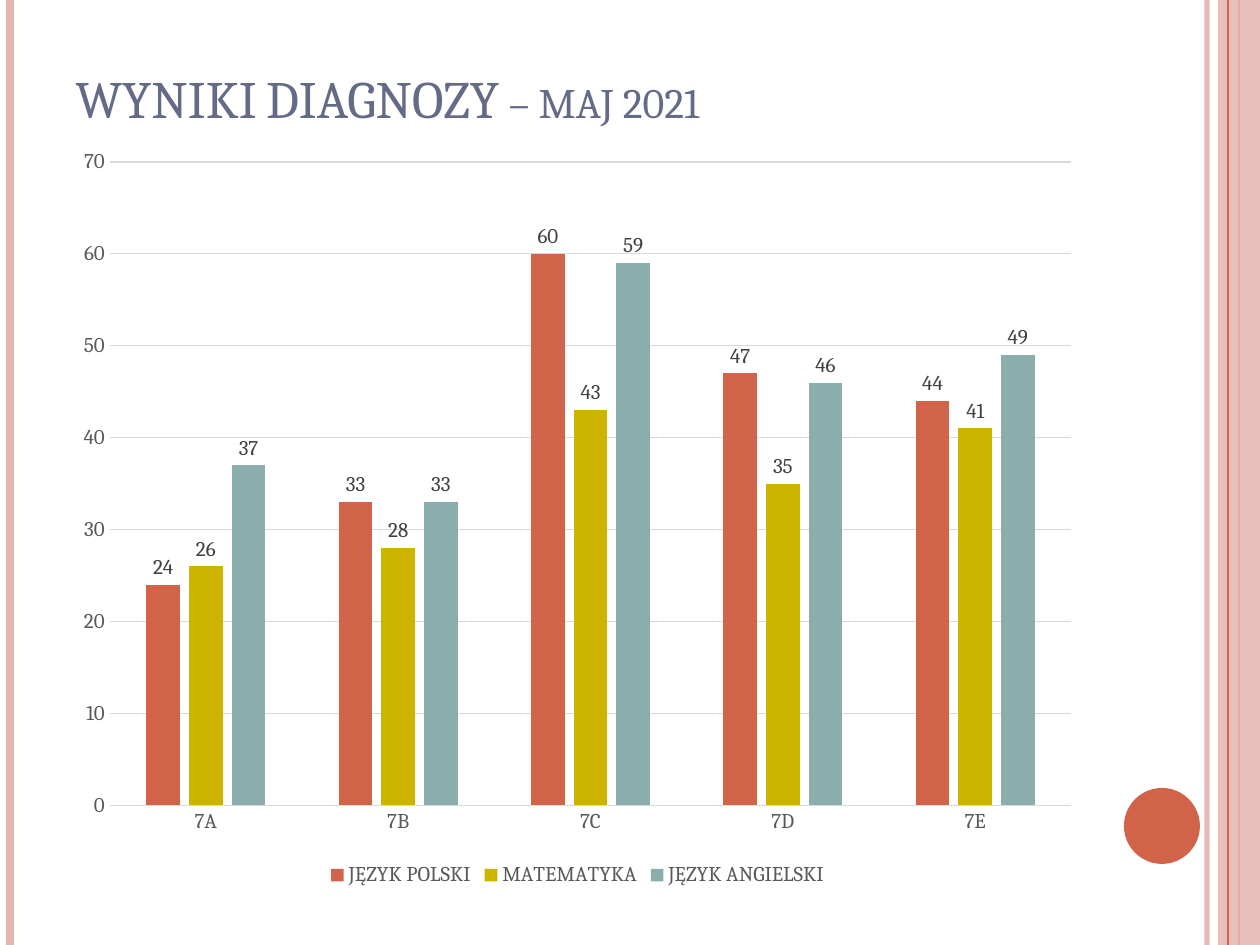
from lxml import etree
from pptx import Presentation
from pptx import util as u
from pptx.chart import data as chart_data
from pptx.dml.color import RGBColor
from pptx.enum import chart as ch, shapes, text
from pptx.oxml import ns

SCALE = 914400 / 126
WIDTH, HEIGHT = 1260, 945
FONT = "Cambria"

PINK = RGBColor(0xE5, 0xB7, 0xB1)
RED = RGBColor(0xD1, 0x63, 0x49)
OLIVE = RGBColor(0xCC, 0xB4, 0x00)
TEAL = RGBColor(0x8C, 0xAD, 0xAE)
SLATE = RGBColor(0x64, 0x6B, 0x86)
AXIS_GREY = RGBColor(0x59, 0x59, 0x59)
LABEL_GREY = RGBColor(0x40, 0x40, 0x40)
GRID_GREY = RGBColor(0xD9, 0xD9, 0xD9)

CLASSES = ["7A", "7B", "7C", "7D", "7E"]
RESULTS = [
    ("JĘZYK POLSKI", (24, 33, 60, 47, 44), RED),
    ("MATEMATYKA", (26, 28, 43, 35, 41), OLIVE),
    ("JĘZYK ANGIELSKI", (37, 33, 59, 46, 49), TEAL),
]


def px(length):
    return u.Emu(round(length * SCALE))


def box(*lengths):
    return [px(length) for length in lengths]


def set_font(font, size, color):
    font.name = FONT
    font.size = u.Pt(size)
    font.bold = False
    font.color.rgb = color


def set_opacity(part, percent):
    color = next(part._element.iter(ns.qn("a:srgbClr")))
    etree.SubElement(color, ns.qn("a:alpha"), val=str(percent * 1000))


def add_stripe(slide, x, color, width, opacity=100):
    stripe = slide.shapes.add_connector(
        shapes.MSO_CONNECTOR.STRAIGHT, *box(x, 0, x, HEIGHT))
    stripe.line.color.rgb = color
    stripe.line.width = u.Pt(width)
    etree.SubElement(stripe._element.spPr, ns.qn("a:effectLst"))
    if opacity < 100:
        set_opacity(stripe, opacity)


def add_filled(slide, preset, place, color, opacity=100):
    filled = slide.shapes.add_shape(preset, *box(*place))
    filled.shadow.inherit = False
    filled.fill.solid()
    filled.fill.fore_color.rgb = color
    filled.line.fill.background()
    if opacity < 100:
        set_opacity(filled, opacity)


def add_decoration(slide):
    add_stripe(slide, 1207, PINK, 3, 93)
    add_stripe(slide, 10, PINK, 4.5)
    add_stripe(slide, 1239, RED, 1.5)
    add_filled(slide, shapes.MSO_SHAPE.RECTANGLE, (1218, 0, 42, HEIGHT), PINK, 87)
    add_stripe(slide, 1228, RED, 0.75)
    add_filled(slide, shapes.MSO_SHAPE.OVAL, (1124, 788, 76, 76), RED)


def set_title(slide, wording):
    title = slide.shapes.title
    title.left, title.top, title.width, title.height = box(63, 38, 1029, 97)
    frame = title.text_frame
    frame.text = wording
    frame.word_wrap = True
    frame.vertical_anchor = text.MSO_ANCHOR.BOTTOM
    heading = frame.paragraphs[0]
    heading.alignment = text.PP_ALIGN.LEFT
    for run in heading.runs:
        set_font(run.font, 30, SLATE)
        run.font._element.set("cap", "small")


def format_axes(chart):
    for axis in (chart.category_axis, chart.value_axis):
        axis.major_tick_mark = axis.minor_tick_mark = ch.XL_TICK_MARK.NONE
        set_font(axis.tick_labels.font, 12, AXIS_GREY)
    scores = chart.value_axis
    scores.minimum_scale, scores.maximum_scale, scores.major_unit = 0, 70, 10
    scores.format.line.fill.background()
    scores.has_major_gridlines = True
    for line in (chart.category_axis.format.line, scores.major_gridlines.format.line):
        line.color.rgb = GRID_GREY
        line.width = u.Pt(0.75)


def format_subject(subject, color):
    subject.format.fill.solid()
    subject.format.fill.fore_color.rgb = color
    subject.invert_if_negative = False
    labels = subject.data_labels
    labels.show_value = True
    labels.position = ch.XL_LABEL_POSITION.OUTSIDE_END
    set_font(labels.font, 12, LABEL_GREY)


def add_results_chart(slide):
    results = chart_data.CategoryChartData()
    results.categories = CLASSES
    for name, scores, _ in RESULTS:
        results.add_series(name, scores)
    chart = slide.shapes.add_chart(
        ch.XL_CHART_TYPE.COLUMN_CLUSTERED, *box(63, 135, 1029, 757), results).chart
    chart.has_title = False
    chart.font.name = FONT
    chart.font.size = u.Pt(10)
    chart.has_legend = True
    chart.legend.position = ch.XL_LEGEND_POSITION.BOTTOM
    chart.legend.include_in_layout = False
    set_font(chart.legend.font, 12, AXIS_GREY)
    format_axes(chart)
    columns = chart.plots[0]
    columns.gap_width, columns.overlap = 219, -27
    columns.vary_by_categories = False
    for subject, (_, _, color) in zip(columns.series, RESULTS):
        format_subject(subject, color)


def main():
    deck = Presentation()
    deck.slide_width, deck.slide_height = box(WIDTH, HEIGHT)
    slide = deck.slides.add_slide(deck.slide_layouts[5])
    add_decoration(slide)
    set_title(slide, "WYNIKI DIAGNOZY – maj 2021")
    add_results_chart(slide)
    deck.save("out.pptx")


if __name__ == "__main__":
    main()
